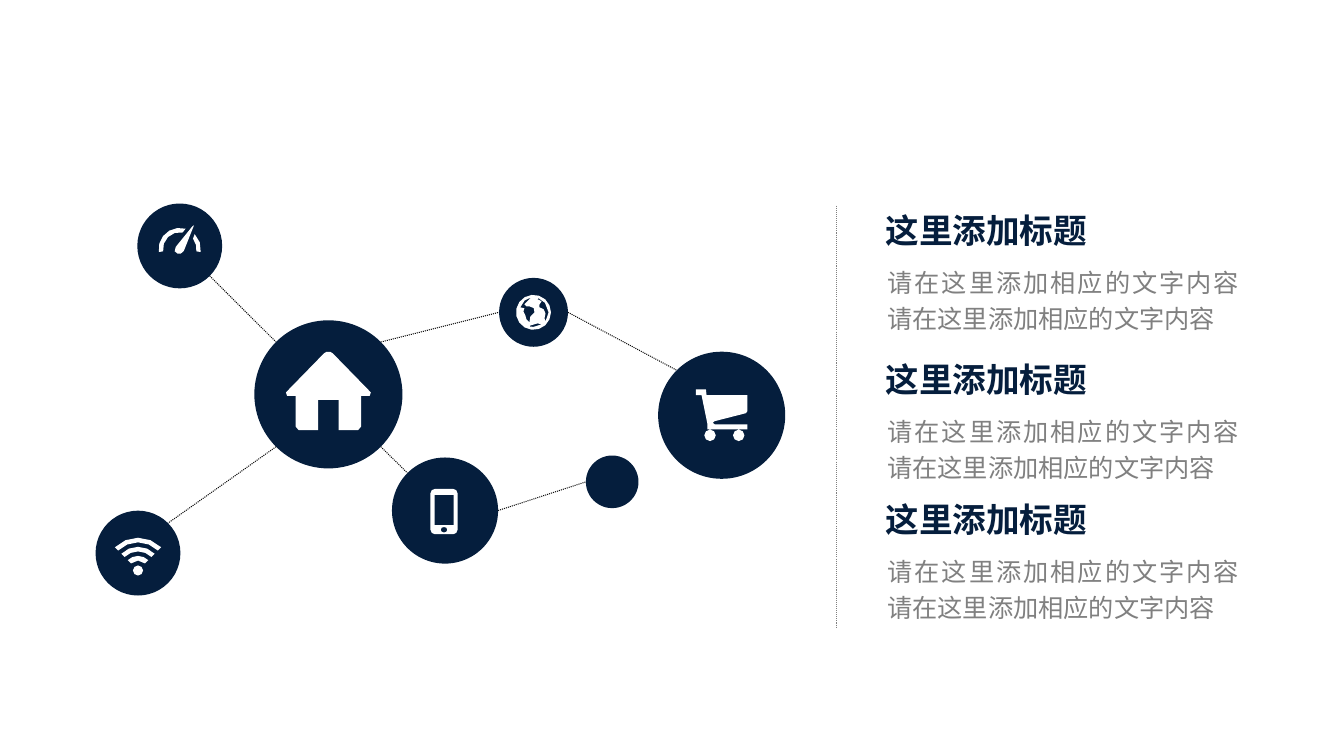
from math import cos, radians, sin
from lxml import etree
from pptx import Presentation
from pptx.dml.color import RGBColor
from pptx.enum.dml import MSO_LINE
from pptx.enum.shapes import MSO_CONNECTOR, MSO_SHAPE
from pptx.enum.text import MSO_AUTO_SIZE, PP_ALIGN
from pptx.oxml.ns import qn
from pptx.util import Pt

NAVY = RGBColor(0x05, 0x1E, 0x3D)
WHITE = RGBColor(0xFF, 0xFF, 0xFF)
GRAY = RGBColor(0x80, 0x80, 0x80)
INK = RGBColor(0x0D, 0x0D, 0x0D)
DOTS = MSO_LINE.ROUND_DOT
LINE = MSO_CONNECTOR.STRAIGHT
OVAL = MSO_SHAPE.OVAL
GROW = MSO_AUTO_SIZE.SHAPE_TO_FIT_TEXT
MID, FULL = PP_ALIGN.CENTER, PP_ALIGN.JUSTIFY

deck = Presentation()
deck.slide_width, deck.slide_height = Pt(960), Pt(540)
slide = deck.slides.add_slide(deck.slide_layouts[6])
shapes = slide.shapes


def arc(x, y, r, start=0, end=360):
    """Points on an arc; angles run clockwise from the right."""
    span = end - start
    count = max(1, round(abs(span) / (45 if r < 8 else 24)))
    # A full turn needs no second point at its start
    stop = count if span == 360 else count + 1
    turns = [radians(start + span * i / count) for i in range(stop)]
    return [(x + r * cos(t), y + r * sin(t)) for t in turns]


def rule(x1, y1, x2, y2, color):
    """Dotted straight line."""
    line = shapes.add_connector(LINE, Pt(x1), Pt(y1), Pt(x2), Pt(y2))
    line.line.color.rgb = color
    line.line.width = Pt(0.75)
    line.line.dash_style = DOTS
    etree.SubElement(line._element.spPr, qn("a:effectLst"))


# Network nodes: centre x, centre y, diameter
nodes = {
    "dot": (437.3, 344.2, 37.6),
    "cart": (515.5, 296.6, 90.8),
    "home": (234.6, 281.7, 105.8),
    "phone": (317.9, 364.7, 75.8),
    "gauge": (128.4, 175.7, 60.6),
    "globe": (381.1, 223.1, 49.2),
    "wifi": (98.6, 395.1, 60.6),
}

# Links run between points on the rims, given as angles
links = [
    ("gauge", 45, "home", 225),
    ("home", 135, "wifi", 315),
    ("home", 45, "phone", 225),
    ("home", 315, "globe", 180),
    ("globe", 0, "cart", 225),
    ("phone", 0, "dot", 180),
]
for first, out, last, into in links:
    ends = []
    for name, turn in ((first, out), (last, into)):
        x, y, size = nodes[name]
        ends += arc(x, y, size / 2, turn, turn)[:1]
    rule(*ends[0], *ends[1], INK)

# Icon outlines, in points from the node's centre
half = [(1.5, -30.3), (3.2, -29.2), (30.3, -1.4), (29.5, 1.1),
        (23.4, 1.1), (23.4, 23), (21.2, 25.6), (7.3, 25.6), (7.3, 4)]
home = [half + [(-x, y) for x, y in reversed(half)]]

cart = [
    [(-5, 4.3), (17.3, -1.4), (18.4, -2.9), (18.4, -14.4), (-10.8, -14.4),
     (-11.2, -18.4), (-18.4, -18.4), (-18.4, -14.4), (-14.4, -14.4),
     (-10.1, 6.5), (-10.1, 10.1), (18.4, 10.1), (18.4, 6.5), (-5, 6.5),
     (-6.4, 5.4)],
    arc(-8.3, 14.4, 4.1),
    arc(12.2, 14.4, 4.1),
]

phone = [
    arc(5.8, -12.3, 3.2, 270, 360) + arc(5.8, 13.7, 3.2, 0, 90)
    + arc(-7.2, 13.7, 3.2, 90, 180) + arc(-7.2, -12.3, 3.2, 180, 270),
    [(-7.4, -11.2), (6.1, -11.2), (6.1, 10.4), (-7.4, 10.4)],
    [(x * 1.2 - 0.7, y + 13.7) for x, y in arc(0, 0, 2)],
]

gauge = [
    arc(0, 2.2, 15.1, 172, 286) + arc(0, 2.2, 12, 280, 172),
    arc(0, 2.2, 15.1, 315, 368) + arc(0, 2.2, 12, 368, 322),
    [(10.2, -14.8), (9, -14), (-2.9, 0.7), (-3.6, 3.8), (-1.6, 5.4),
     (0.8, 5.4), (2.9, 3.6)],
]

globe = [
    arc(0, 0, 12.5),
    [(10.8, 0), (8.6, 6.5), (7.9, 4.3), (8.6, 0.7), (7.2, -2.2),
     (4.3, -3.6), (4.2, -5.5), (5.8, -7.9), (2.9, -9.4),
     (3.6, -10.1), (8.2, -6.8)],
    [(-1.4, -10.8), (-2.9, -9.4), (-6.5, -5.8), (-5, -4.3), (-2.9, -4.3),
     (0.2, -3), (0.7, 0), (-2.2, 2.9), (-2.9, 7.2), (-5, 5), (-5.8, 2.2),
     (-7.2, -0.7), (-6.5, -2.9), (-9.4, -3.6), (-6.3, -8.5)],
    [(-2.9, 10.1), (-2.2, 9.4), (2.9, 7.9), (5.8, 8.6), (0, 10.4)],
]

wifi = [arc(0, 12.4, 3.6)]
for r in (23.4, 16.9, 10.4):
    wifi.append(arc(0, 12.4, r, 225, 315) + arc(0, 12.4, r - 3.3, 315, 225))

icons = {"cart": cart, "home": home, "phone": phone,
         "gauge": gauge, "globe": globe, "wifi": wifi}

# Discs with their icons
for name, (x, y, size) in nodes.items():
    disc = shapes.add_shape(OVAL, Pt(x - size / 2), Pt(y - size / 2),
                            Pt(size), Pt(size))
    parts = [(disc, NAVY)]
    if name in icons:
        pen = None
        for loop in icons[name]:
            spots = [(px * 100, py * 100) for px, py in loop]
            if pen is None:
                pen = shapes.build_freeform(*spots[0], scale=Pt(1) / 100)
            else:
                pen.move_to(*spots[0])
            pen.add_line_segments(spots[1:], close=True)
        parts.append((pen.convert_to_shape(Pt(x), Pt(y)), WHITE))
    for part, color in parts:
        part.shadow.inherit = False
        part.fill.solid()
        part.fill.fore_color.rgb = color
        part.line.fill.background()

# Divider
rule(597.6, 146.9, 597.6, 448.9, GRAY)

# Text blocks: a heading over a paragraph
head = {"name": "Arial", "size": Pt(24), "bold": True}
body = {"name": "Arial", "size": Pt(18)}
for top in (146.2, 252.7, 352.8):
    rows = [
        ("请在这里添加相应的文字内容请在这里添加相应的文字内容",
         (626.7, top + 36.7, 265.7, 59.8), True, FULL, 1.2, body, GRAY),
        ("这里添加标题",
         (624.6, top, 159.8, 36.4), False, MID, 1.0, head, NAVY),
    ]
    for text, place, wrap, align, gap, style, color in rows:
        frame = shapes.add_textbox(*map(Pt, place)).text_frame
        frame.word_wrap = wrap
        frame.auto_size = GROW
        para = frame.paragraphs[0]
        para.alignment = align
        para.line_spacing = gap
        run = para.add_run()
        run.text = text
        for key, value in style.items():
            setattr(run.font, key, value)
        run.font.color.rgb = color

deck.save("out.pptx")
